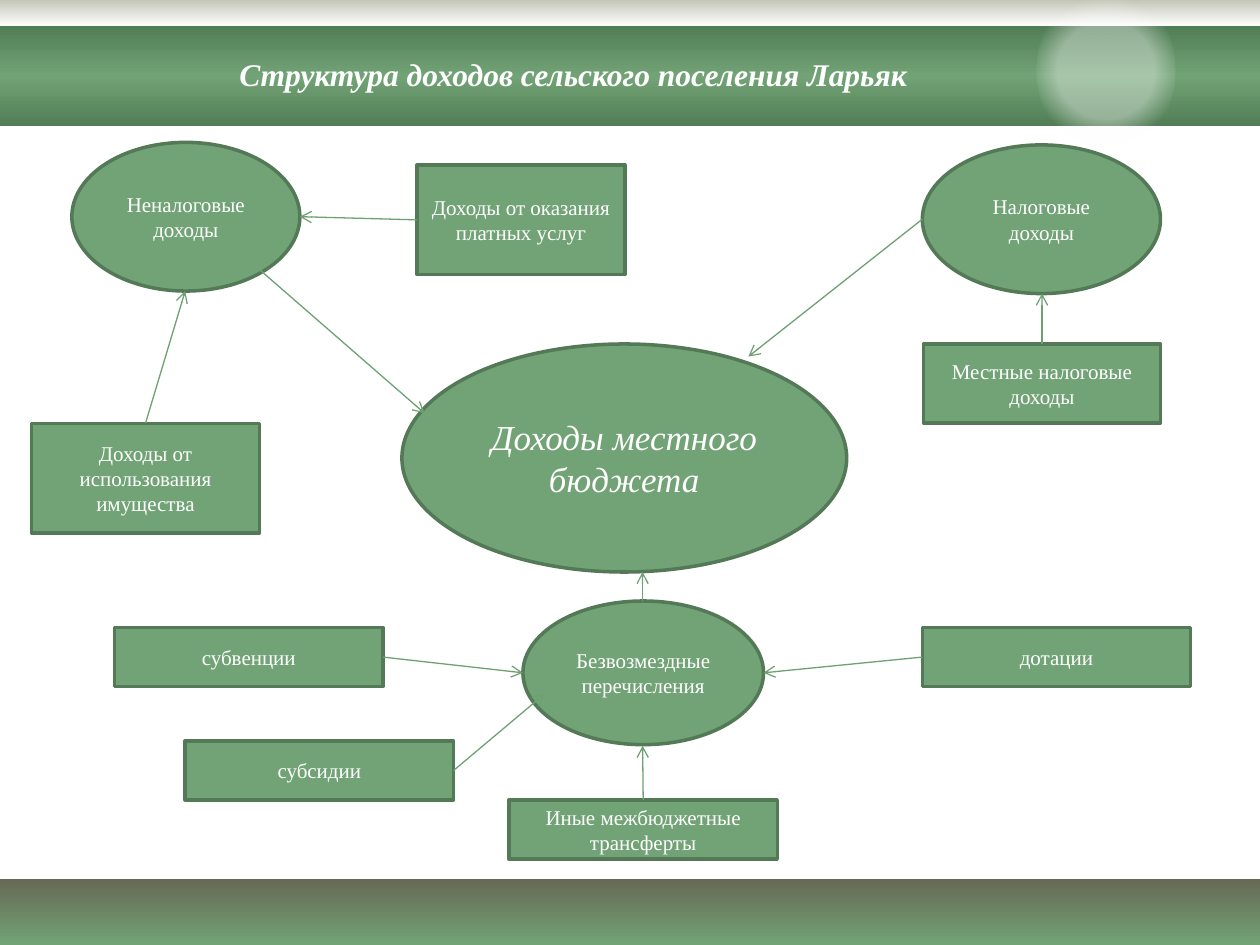
from lxml import etree
from pptx import Presentation
from pptx.dml.color import RGBColor
from pptx.enum.shapes import MSO_CONNECTOR, MSO_SHAPE
from pptx.enum.text import MSO_ANCHOR, PP_ALIGN
from pptx.oxml import parse_xml
from pptx.oxml.ns import nsdecls, qn
from pptx.util import Inches, Pt

WHITE = RGBColor(0xFF, 0xFF, 0xFF)
GREEN = RGBColor(0x72, 0xA3, 0x76)
DARK_GREEN = RGBColor(0x52, 0x7E, 0x56)
OUTLINE = RGBColor(0x54, 0x79, 0x57)
ARROW = RGBColor(0x6E, 0xA1, 0x72)
OLIVE = RGBColor(0x67, 0x6A, 0x55)
PALE_OLIVE = RGBColor(0xC4, 0xC6, 0xB8)
FONT = "Times New Roman"
OVAL, RECT = MSO_SHAPE.OVAL, MSO_SHAPE.RECTANGLE
LINEAR = '<a:lin ang="5400000" scaled="0"/>'
RADIAL = ('<a:path path="circle"><a:fillToRect l="50000" t="50000" '
          'r="50000" b="50000"/></a:path>')

deck = Presentation()
deck.slide_width, deck.slide_height = Inches(10), Inches(7.5)
page = deck.slides.add_slide(deck.slide_layouts[6])


def add_plain_shape(kind, place):
    shape = page.shapes.add_shape(kind, *[Inches(value) for value in place])
    shape.shadow.inherit = False
    return shape


def write_centred(frame, text, size, bold=False, italic=False):
    frame.word_wrap = True
    para = frame.paragraphs[0]
    para.text = text
    para.alignment = PP_ALIGN.CENTER
    para.font.name, para.font.size = FONT, Pt(size)
    para.font.bold, para.font.italic = bold, italic
    para.font.color.rgb = WHITE


# Gradient bands and the light spot: stops are position, colour, opacity
for kind, place, stops, direction in [
    (RECT, (0, 6.98, 10, 0.52), [(0, OLIVE, 100), (100, GREEN, 100)], LINEAR),
    (RECT, (0, 0, 10, 0.21), [(0, PALE_OLIVE, 100), (100, WHITE, 100)], LINEAR),
    (RECT, (0, 0.21, 10, 0.79),
     [(0, DARK_GREEN, 100), (50, GREEN, 100), (100, DARK_GREEN, 100)], LINEAR),
    (OVAL, (8.23, -0.11, 1.1, 1.34), [(44, WHITE, 38), (67, WHITE, 0)], RADIAL),
]:
    band = add_plain_shape(kind, place)
    band.line.fill.background()
    band.fill.background()
    stop_xml = "".join(
        f'<a:gs pos="{position * 1000}"><a:srgbClr val="{colour}">'
        f'<a:alpha val="{opacity * 1000}"/></a:srgbClr></a:gs>'
        for position, colour, opacity in stops)
    gradient = parse_xml(f'<a:gradFill {nsdecls("a")} rotWithShape="1">'
                         f'<a:gsLst>{stop_xml}</a:gsLst>{direction}</a:gradFill>')
    properties = band._element.spPr
    properties.replace(properties.find(qn("a:noFill")), gradient)

# Title
title = page.shapes.add_textbox(Inches(0.65), Inches(0.39), Inches(7.8), Inches(0.4))
write_centred(title.text_frame, "Структура доходов сельского поселения Ларьяк",
              18, bold=True, italic=True)

# Income sources
nodes = {}
for name, kind, place, text in [
    ("budget", OVAL, (3.19, 2.73, 3.53, 1.81), "Доходы местного бюджета"),
    ("tax", OVAL, (7.32, 1.15, 1.89, 1.18), "Налоговые доходы"),
    ("non_tax", OVAL, (0.57, 1.13, 1.81, 1.18), "Неналоговые доходы"),
    ("property", RECT, (0.25, 3.36, 1.81, 0.87), "Доходы от использования имущества"),
    ("transfers", OVAL, (4.15, 4.77, 1.91, 1.14), "Безвозмездные перечисления"),
    ("grants", RECT, (7.32, 4.98, 2.13, 0.47), "дотации"),
    ("other", RECT, (4.04, 6.35, 2.13, 0.47), "Иные межбюджетные трансферты"),
    ("subventions", RECT, (0.91, 4.98, 2.13, 0.47), "субвенции"),
    ("local_tax", RECT, (7.33, 2.73, 1.88, 0.63), "Местные налоговые доходы"),
    ("services", RECT, (3.31, 1.31, 1.65, 0.87), "Доходы от оказания платных услуг"),
    ("subsidies", RECT, (1.47, 5.88, 2.13, 0.47), "субсидии"),
]:
    node = add_plain_shape(kind, place)
    node.fill.solid()
    node.fill.fore_color.rgb = GREEN
    node.line.color.rgb = OUTLINE
    node.line.width = Pt(2)
    node.text_frame.vertical_anchor = MSO_ANCHOR.MIDDLE
    central = name == "budget"
    write_centred(node.text_frame, text, 20 if central else 12, italic=central)
    nodes[name] = node

# Arrows: start, end, and the rectangle side where the arrow begins
for start, end, source, side in [
    ((1.15, 3.36), (1.47, 2.31), "property", 0),
    ((3.31, 1.74), (2.38, 1.72), "services", 1),
    ((2.06, 2.14), (3.37, 3.28), None, None),
    ((7.32, 1.74), (5.94, 2.83), None, None),
    ((3.03, 5.22), (4.15, 5.34), "subventions", 3),
    ((7.32, 5.22), (6.06, 5.34), "grants", 1),
    ((5.1, 6.35), (5.1, 5.92), "other", 0),
    ((5.1, 4.77), (5.1, 4.54), None, None),
    ((8.27, 2.73), (8.27, 2.33), "local_tax", 0),
    ((3.6, 6.11), (4.32, 5.51), "subsidies", 3),
]:
    arrow = page.shapes.add_connector(
        MSO_CONNECTOR.STRAIGHT, *[Inches(value) for value in start + end])
    if source:
        arrow.begin_connect(nodes[source], side)
    arrow.line.color.rgb = ARROW
    arrow.line.width = Pt(0.75)
    etree.SubElement(arrow.line._get_or_add_ln(), qn("a:tailEnd"), type="arrow")
    etree.SubElement(arrow._element.spPr, qn("a:effectLst"))

deck.save("out.pptx")
